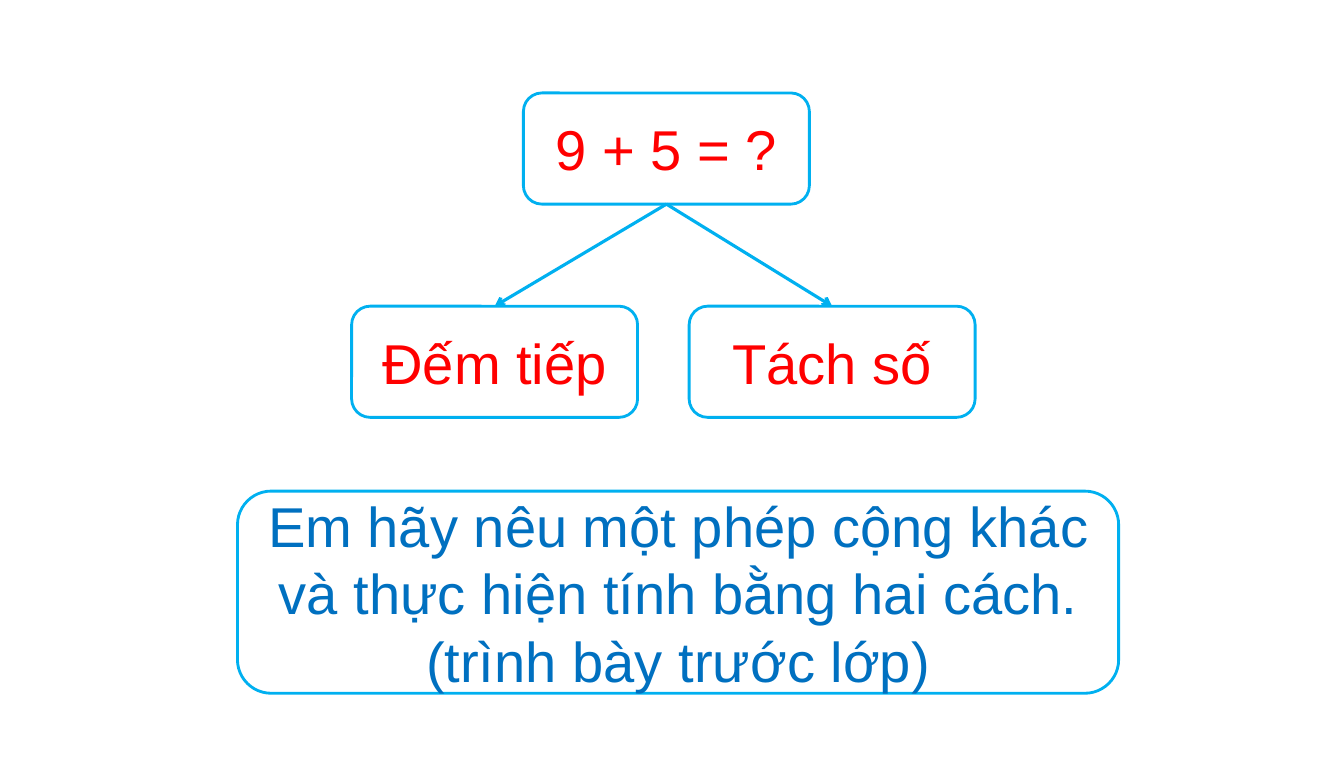
from lxml import etree
from pptx import Presentation
from pptx.dml.color import RGBColor
from pptx.enum.shapes import MSO_CONNECTOR, MSO_SHAPE
from pptx.enum.text import MSO_ANCHOR, PP_ALIGN
from pptx.oxml.ns import qn
from pptx.util import Inches, Pt

ROUNDED = MSO_SHAPE.ROUNDED_RECTANGLE
STRAIGHT = MSO_CONNECTOR.STRAIGHT
MIDDLE = MSO_ANCHOR.MIDDLE
CENTER = PP_ALIGN.CENTER
SKY = RGBColor(0x00, 0xB0, 0xF0)
RED = RGBColor(0xFF, 0x00, 0x00)
BLUE = RGBColor(0x00, 0x70, 0xC0)

QUESTION = "9 + 5 = ?"
METHODS = ["Đếm tiếp", "Tách số"]
TASK = [
    "Em hãy nêu một phép cộng khác và thực hiện tính bằng hai cách.",
    "(trình bày trước lớp)",
]

SLIDE_SIZE = (13.3, 7.5)
NODE_SIZE = (2.83, 1.1)
QUESTION_AT = (5.18, 0.92)
METHODS_AT = (3.48, 3.03)
METHOD_STEP = 3.34
TASK_AT = (2.35, 4.86)
TASK_SIZE = (8.72, 2)
TOP_SITE, BOTTOM_SITE = 0, 2


def write_text(shape, lines, *, color, size=40, font="Arial"):
    frame = shape.text_frame
    frame.word_wrap = True
    frame.vertical_anchor = MIDDLE
    frame.text = "\n".join(lines)
    for paragraph in frame.paragraphs:
        paragraph.alignment = CENTER
        for run in paragraph.runs:
            run.font.name = font
            run.font.size = Pt(size)
            run.font.color.rgb = color


def add_box(slide, position, size, lines, color):
    box = slide.shapes.add_shape(ROUNDED, *map(Inches, position + size))
    box.shadow.inherit = False
    box.fill.background()
    box.line.color.rgb = SKY
    box.line.width = Pt(2)
    write_text(box, lines, color=color)
    return box


def add_arrow(slide, start, end):
    arrow = slide.shapes.add_connector(STRAIGHT, 0, 0, 0, 0)
    arrow.begin_connect(start, BOTTOM_SITE)
    arrow.end_connect(end, TOP_SITE)
    arrow.line.color.rgb = SKY
    arrow.line.width = Pt(2.25)
    properties = arrow.element.spPr
    etree.SubElement(properties.find(qn("a:ln")), qn("a:tailEnd"), type="arrow")
    etree.SubElement(properties, qn("a:effectLst"))


def main():
    presentation = Presentation()
    presentation.slide_width, presentation.slide_height = map(Inches, SLIDE_SIZE)
    slide = presentation.slides.add_slide(presentation.slide_layouts[6])

    question = add_box(slide, QUESTION_AT, NODE_SIZE, [QUESTION], RED)
    left, top = METHODS_AT
    for column, method in enumerate(METHODS):
        position = (left + column * METHOD_STEP, top)
        add_arrow(slide, question, add_box(slide, position, NODE_SIZE, [method], RED))
    add_box(slide, TASK_AT, TASK_SIZE, TASK, BLUE)

    presentation.save("out.pptx")


if __name__ == "__main__":
    main()
